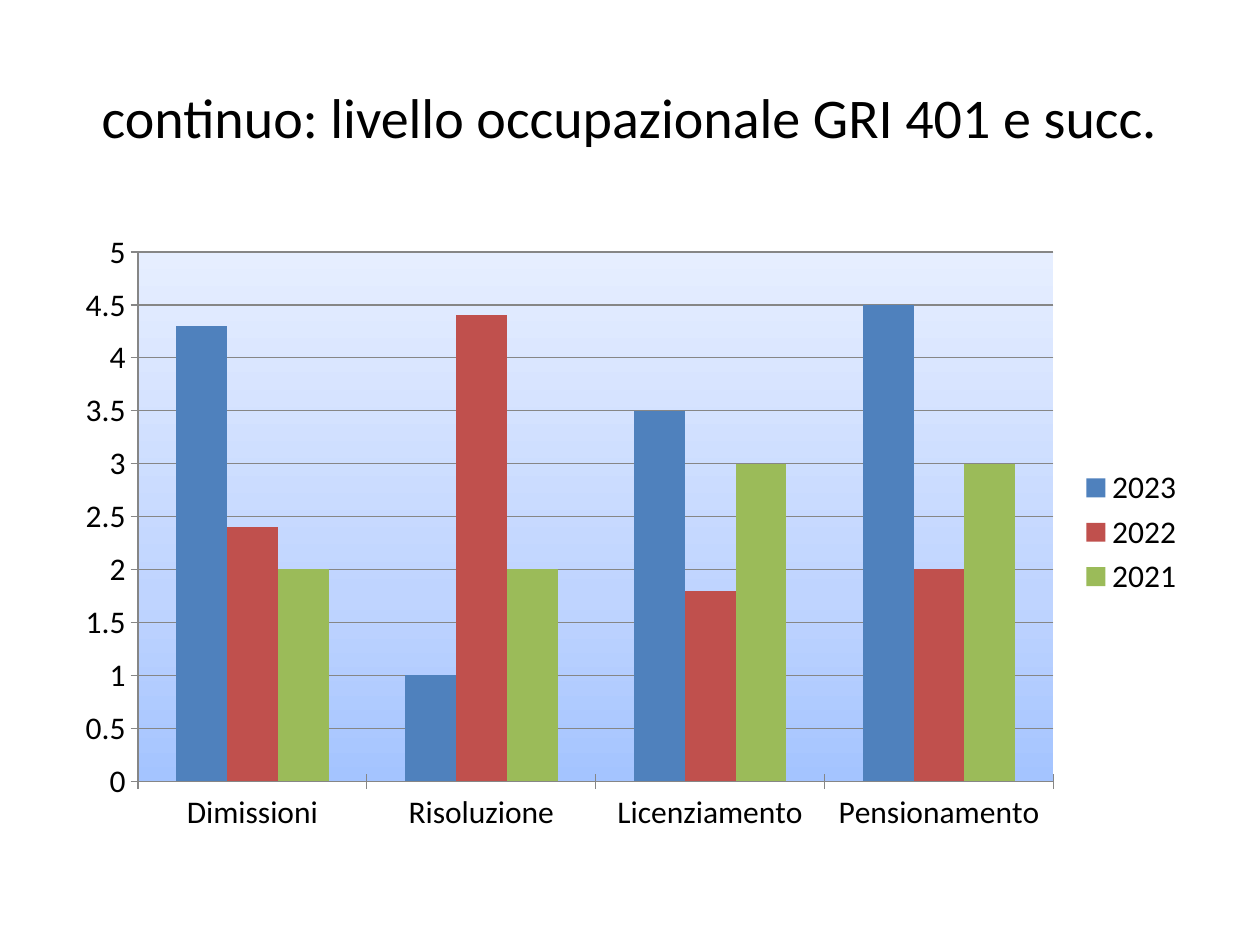
from lxml import etree
from pptx import Presentation
from pptx.chart.data import CategoryChartData
from pptx.dml.color import RGBColor
from pptx.enum.chart import XL_CHART_TYPE, XL_LEGEND_POSITION, XL_TICK_MARK
from pptx.enum.text import MSO_ANCHOR, PP_ALIGN
from pptx.oxml import parse_xml
from pptx.oxml.ns import nsdecls
from pptx.util import Inches, Pt

COLUMNS = XL_CHART_TYPE.COLUMN_CLUSTERED
LEGEND_RIGHT = XL_LEGEND_POSITION.RIGHT
TICK_CROSS = XL_TICK_MARK.CROSS
MIDDLE = MSO_ANCHOR.MIDDLE
CENTER = PP_ALIGN.CENTER

BLACK = RGBColor(0x00, 0x00, 0x00)
GRAY = RGBColor(0x86, 0x86, 0x86)
BLUE = RGBColor(0x4F, 0x81, 0xBD)
RED = RGBColor(0xC0, 0x50, 0x4D)
GREEN = RGBColor(0x9B, 0xBB, 0x59)

# Plot background, from bottom to top: position in percent and colour
PLOT_GRADIENT = [
    (0, RGBColor(0xA4, 0xC4, 0xFF)),
    (35, RGBColor(0xBF, 0xD4, 0xFF)),
    (100, RGBColor(0xE6, 0xEE, 0xFF)),
]

REASONS = ["Dimissioni", "Risoluzione", "Licenziamento", "Pensionamento"]
YEARS = [
    ("2023", (4.3, 1, 3.5, 4.5), BLUE),
    ("2022", (2.4, 4.4, 1.8, 2), RED),
    ("2021", (2, 2, 3, 3), GREEN),
]


class SlideBuilder:
    """Holds the style and the current slide."""

    font_name = "Calibri"
    left, width = Inches(0.5), Inches(9)

    def __init__(self, slide):
        self.slide = slide

    def style_font(self, font, size):
        font.name = self.font_name
        font.size = Pt(size)
        font.color.rgb = BLACK

    def add_title(self, text, top, height):
        frame = self.slide.shapes.add_textbox(self.left, top, self.width, height).text_frame
        frame.word_wrap = True
        frame.vertical_anchor = MIDDLE
        heading = frame.paragraphs[0]
        heading.text = text
        heading.alignment = CENTER
        self.style_font(heading.runs[0].font, 32)

    def add_columns(self, categories, series, top, height):
        data = CategoryChartData()
        data.categories = categories
        for name, values, _ in series:
            data.add_series(name, values)
        chart = self.slide.shapes.add_chart(
            COLUMNS, self.left, top, self.width, height, data).chart
        self.style_font(chart.font, 18)
        chart.has_title = False

        # Columns
        plot = chart.plots[0]
        plot.vary_by_categories = False
        plot.gap_width = 150
        for columns, (_, _, color) in zip(plot.series, series):
            columns.format.fill.solid()
            columns.format.fill.fore_color.rgb = color

        # Axes and gridlines
        chart.value_axis.has_major_gridlines = True
        for axis in (chart.category_axis, chart.value_axis):
            axis.major_tick_mark = TICK_CROSS
            axis.format.line.color.rgb = GRAY
        chart.value_axis.major_gridlines.format.line.color.rgb = GRAY

        # Legend
        chart.has_legend = True
        chart.legend.position = LEGEND_RIGHT
        chart.legend.include_in_layout = False
        return chart

    def fill_plot_area(self, chart, stops):
        properties = parse_xml(
            f'<c:spPr {nsdecls("c", "a")}><a:gradFill><a:gsLst/>'
            '<a:lin ang="16200000" scaled="0"/></a:gradFill></c:spPr>')
        stop_list = properties[0][0]
        namespace = "{" + properties.nsmap["a"] + "}"
        for position, color in stops:
            stop = etree.SubElement(stop_list, namespace + "gs", pos=str(position * 1000))
            etree.SubElement(stop, namespace + "srgbClr", val=str(color))
        chart.element.chart.plotArea.append(properties)


def main():
    presentation = Presentation()
    presentation.slide_width = Inches(10)
    presentation.slide_height = Inches(7.5)
    builder = SlideBuilder(presentation.slides.add_slide(presentation.slide_layouts[6]))

    # Title
    builder.add_title("continuo: livello occupazionale GRI 401 e succ.",
                      Inches(0.3), Inches(1.25))

    # Departures by reason and year
    departures = builder.add_columns(REASONS, YEARS, Inches(1.75), Inches(4.95))
    builder.fill_plot_area(departures, PLOT_GRADIENT)

    presentation.save("out.pptx")


if __name__ == "__main__":
    main()
